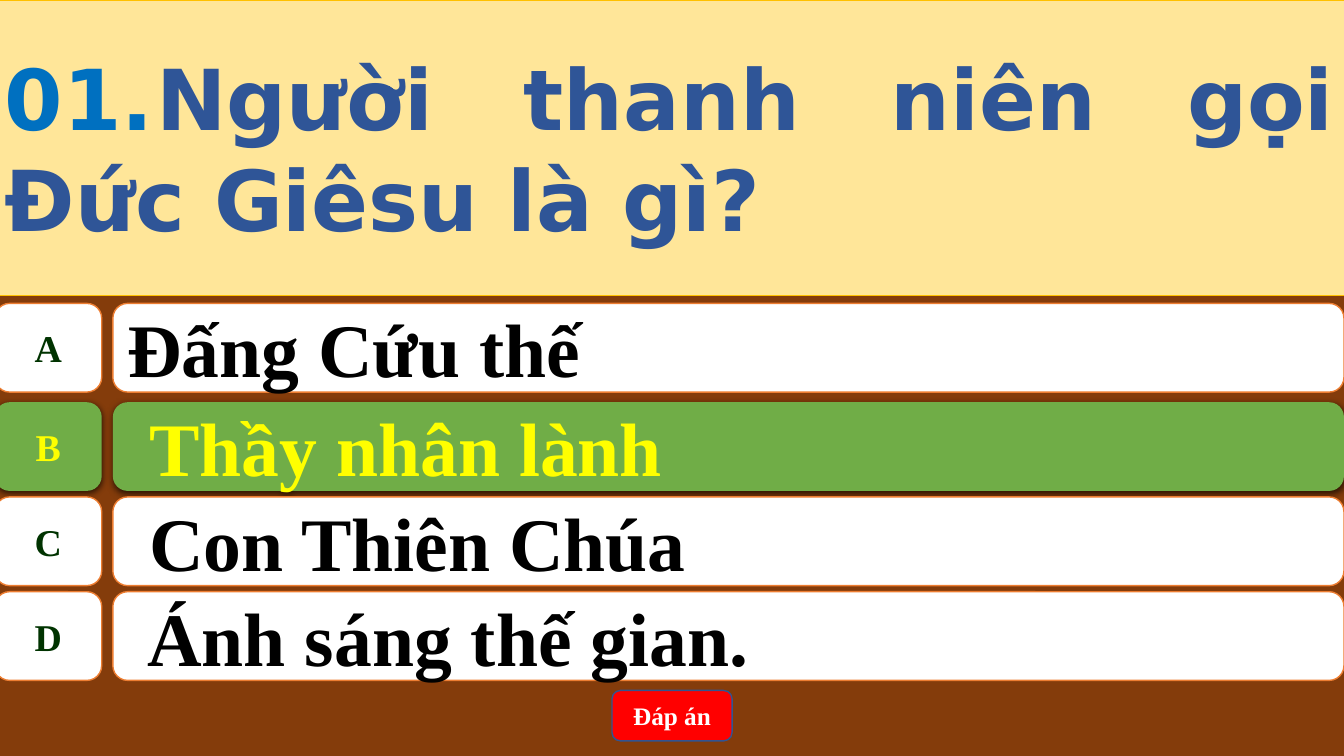
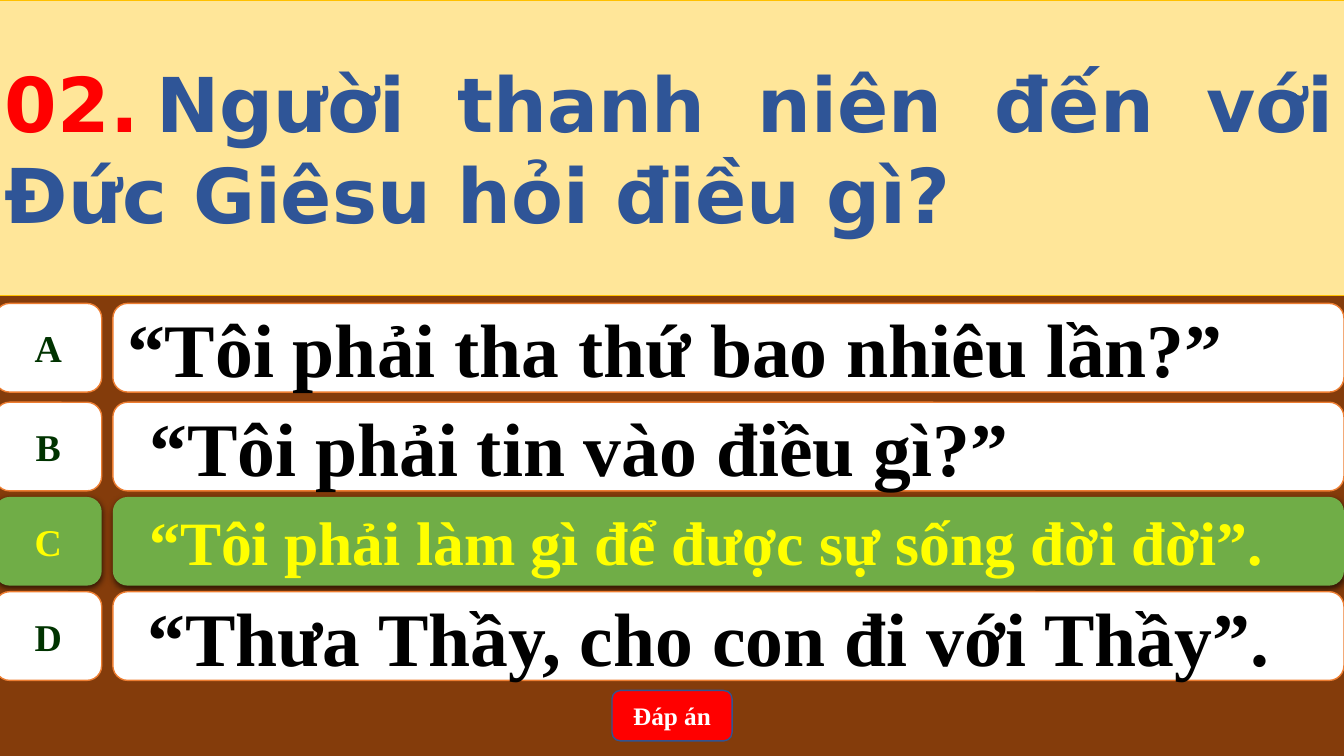
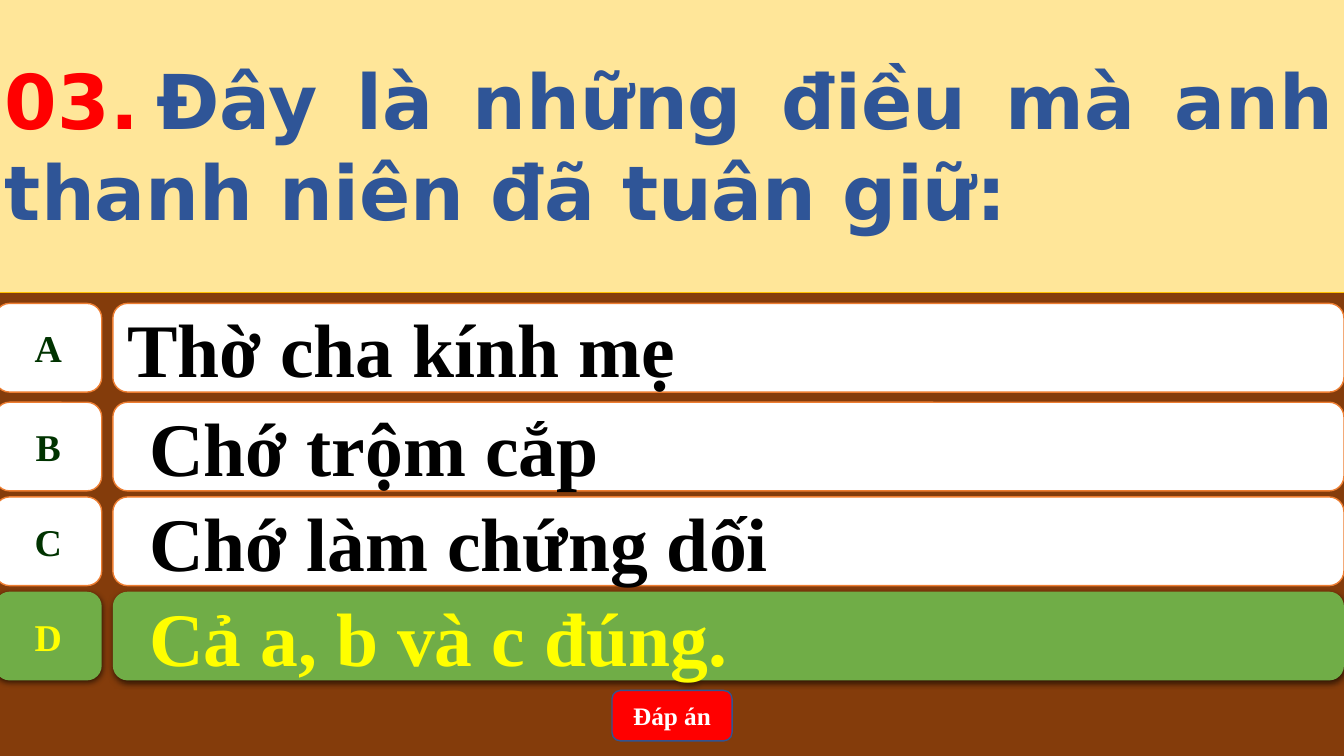
from lxml import etree
from pptx import Presentation
from pptx.dml.color import RGBColor
from pptx.enum.shapes import MSO_SHAPE
from pptx.enum.text import MSO_ANCHOR, MSO_AUTO_SIZE, PP_ALIGN
from pptx.oxml.ns import qn
from pptx.util import Inches, Pt

ROUND = MSO_SHAPE.ROUNDED_RECTANGLE
TILE = MSO_SHAPE.FLOWCHART_ALTERNATE_PROCESS
MIDDLE = MSO_ANCHOR.MIDDLE
FIXED = MSO_AUTO_SIZE.NONE
LEFT, CENTER, FULL = PP_ALIGN.LEFT, PP_ALIGN.CENTER, PP_ALIGN.JUSTIFY

BROWN = RGBColor(0x84, 0x3C, 0x0B)
CREAM = RGBColor(0xFF, 0xE6, 0x99)
GOLD = RGBColor(0xFF, 0xC0, 0x00)
WHITE = RGBColor(0xFF, 0xFF, 0xFF)
BLACK = RGBColor(0x00, 0x00, 0x00)
ORANGE = RGBColor(0xED, 0x7D, 0x31)
FOREST = RGBColor(0x00, 0x33, 0x00)
GREEN = RGBColor(0x70, 0xAD, 0x47)
YELLOW = RGBColor(0xFF, 0xFF, 0x00)
RED = RGBColor(0xFF, 0x00, 0x00)
NAVY = RGBColor(0x32, 0x54, 0x91)
BLUE = RGBColor(0x2F, 0x55, 0x97)
SKY = RGBColor(0x00, 0x70, 0xC0)

SERIF, SANS = "Times New Roman", "DejaVu Sans"

deck = Presentation()
deck.slide_width, deck.slide_height = Inches(13.33), Inches(7.5)
COL, ROW = deck.slide_width / 100, deck.slide_height / 100
EDGE = -0.38
TOPS = [40.13, 53.2, 65.73, 78.27]
TALL = 11.73
HANG = (0.5, -0.28)
INDENTS = [(0, 0), HANG, HANG, (0.2, 0)]

QUIZ = [
    ("01.", SKY, 60, 0, "Người thanh niên gọi Đức Giêsu là gì?", "B",
     [("Đấng Cứu thế", 54), ("Thầy nhân lành", 54),
      ("Con Thiên Chúa", 54), ("Ánh sáng thế gian.", 54)]),
    ("02.", RED, 54, 0, "Người thanh niên đến với Đức Giêsu hỏi điều gì?", "C",
     [("“Tôi phải tha thứ bao nhiêu lần?”", 54),
      ("“Tôi phải tin vào điều gì?”", 54),
      ("“Tôi phải làm gì để được sự sống đời đời”.", 44),
      ("“Thưa Thầy, cho con đi với Thầy”.", 54)]),
    ("03.", RED, 54, -0.4, "Đây là những điều mà anh thanh niên đã tuân giữ:", "D",
     [("Thờ cha kính mẹ", 54), ("Chớ trộm cắp", 54),
      ("Chớ làm chứng dối", 54), ("Cả a, b và c đúng.", 54)]),
]


def draw(shapes, kind, x, y, wide, tall, fill, line):
    shape = shapes.add_shape(kind, round(x * COL), round(y * ROW),
                             round(wide * COL), round(tall * ROW))
    shape.shadow.inherit = False
    shape.fill.solid()
    shape.fill.fore_color.rgb = fill
    if line is None:
        shape.line.fill.background()
        glow = shape._element.spPr.find(qn("a:effectLst"))
        drop = etree.SubElement(glow, qn("a:outerShdw"), blurRad="57150",
                                dist="19050", dir="5400000", algn="ctr", rotWithShape="0")
        tint = etree.SubElement(drop, qn("a:srgbClr"), val="000000")
        etree.SubElement(tint, qn("a:alpha"), val="63000")
    else:
        shape.line.color.rgb = line
        shape.line.width = Pt(1)
    shape.text_frame.vertical_anchor = MIDDLE
    return shape


def write(shape, align, text, size, color, face=SERIF):
    para = shape.text_frame.paragraphs[0]
    para.alignment = align
    run = para.add_run()
    run.text = text
    run.font.size = Pt(size)
    run.font.name = face
    run.font.bold = True
    run.font.color.rgb = color
    return para


back = deck.slide_master.background.fill
back.solid()
back.fore_color.rgb = BROWN

for mark, tone, size, top, ask, key, picks in QUIZ:
    slide = deck.slides.add_slide(deck.slide_layouts[5])

    title = slide.shapes.title
    title.left, title.top = round(EDGE * COL), round(top * ROW)
    title.width, title.height = round(100.43 * COL), round(39.07 * ROW)
    title.fill.solid()
    title.fill.fore_color.rgb = CREAM
    title.line.color.rgb = GOLD
    title.line.width = Pt(0.5)
    title.text_frame.word_wrap = True
    title.text_frame.auto_size = FIXED
    title.text_frame.vertical_anchor = MIDDLE
    write(title, FULL, mark + "\t", size, tone, SANS)
    write(title, FULL, ask, size, BLUE, SANS).line_spacing = 1.0

    for letter, y, indent, (text, points) in zip("ABCD", TOPS, INDENTS, picks):
        fill, line, ink, tint = WHITE, ORANGE, BLACK, FOREST
        if letter == key:
            fill, line, ink, tint, indent = GREEN, None, YELLOW, YELLOW, HANG
        group = slide.shapes.add_group_shape().shapes
        tile = draw(group, TILE, EDGE, y, 7.95, TALL, fill, line)
        tile.text_frame.word_wrap = False
        write(tile, CENTER, letter, 27, tint)
        bar = draw(group, ROUND, 8.4, y, 91.6, TALL, fill, line)
        bar.text_frame.word_wrap = True
        props = write(bar, LEFT, text, points, ink)._p.get_or_add_pPr()
        props.set("marL", str(Inches(indent[0])))
        props.set("indent", str(Inches(indent[1])))

    button = draw(slide.shapes, ROUND, 45.54, 91.33, 8.93, 6.67, RED, NAVY)
    write(button, CENTER, "Đáp án", 18, WHITE)

deck.save("out.pptx")
